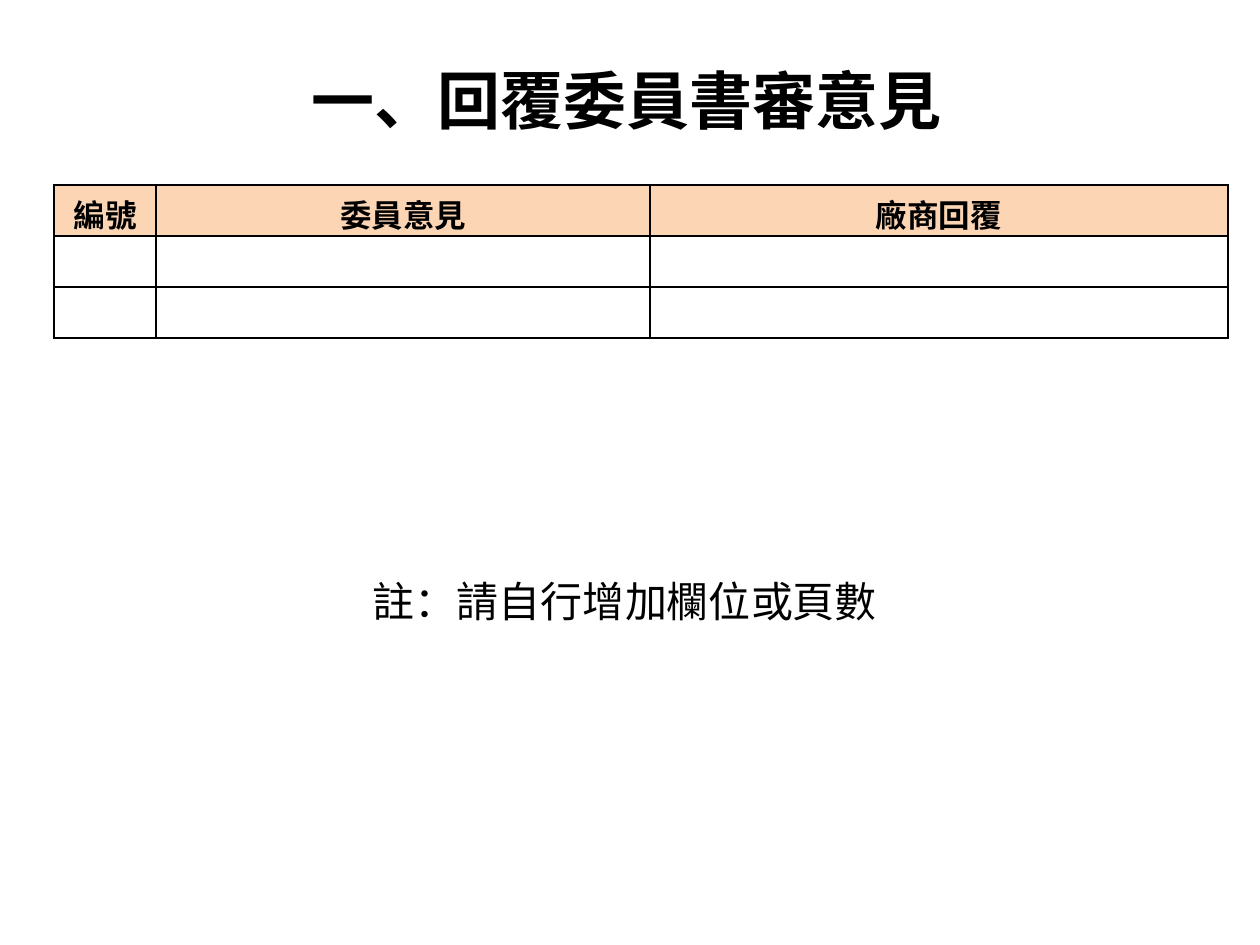
from lxml import etree
from pptx import Presentation
from pptx.dml.color import RGBColor
from pptx.enum.text import MSO_ANCHOR, PP_ALIGN
from pptx.oxml.ns import qn
from pptx.util import Pt

CENTER = PP_ALIGN.CENTER
LEFT = PP_ALIGN.LEFT
TOP = MSO_ANCHOR.TOP
MIDDLE = MSO_ANCHOR.MIDDLE

BLACK = RGBColor(0, 0, 0)
WHITE = RGBColor(255, 255, 255)
PEACH = RGBColor(0xFC, 0xD5, 0xB5)
FONT = "Noto Sans CJK SC"

TITLE = "一、回覆委員書審意見"
NOTE = "註：請自行增加欄位或頁數"
ROWS = [
    ["編號", "委員意見", "廠商回覆"],
    ["", "", ""],
    ["", "", ""],
]
COLUMN_WIDTHS = [102, 494, 578]
ROW_HEIGHT = 51
TABLE_LEFT, TABLE_TOP = 54, 185
EMU_PER_PX = 914400 // 126


def px(length):
    return length * EMU_PER_PX


def write_text(frame, text, size, bold=False, align=LEFT):
    paragraph = frame.paragraphs[0]
    paragraph.alignment = align
    run = paragraph.add_run()
    run.text = text
    run.font.size = Pt(size)
    run.font.bold = bold
    run.font.name = FONT
    run.font.color.rgb = BLACK
    east_asian = etree.SubElement(run.font._element, qn("a:ea"))
    east_asian.set("typeface", FONT)


def add_text(slide, box, text, wrap=True, anchor=TOP, **style):
    shape = slide.shapes.add_textbox(*map(px, box))
    frame = shape.text_frame
    frame.word_wrap = wrap
    frame.vertical_anchor = anchor
    write_text(frame, text, **style)


def add_borders(cell):
    properties = cell._tc.get_or_add_tcPr()
    for index, side in enumerate(("lnL", "lnR", "lnT", "lnB")):
        line = etree.Element(qn(f"a:{side}"), w=str(Pt(1)))
        fill = etree.SubElement(line, qn("a:solidFill"))
        etree.SubElement(fill, qn("a:srgbClr"), val=str(BLACK))
        properties.insert(index, line)


def add_review_table(slide):
    frame = slide.shapes.add_table(
        len(ROWS), len(COLUMN_WIDTHS), px(TABLE_LEFT), px(TABLE_TOP),
        px(sum(COLUMN_WIDTHS)), px(ROW_HEIGHT * len(ROWS)))
    table = frame.table
    for column, width in zip(table.columns, COLUMN_WIDTHS):
        column.width = px(width)
    for row_index, texts in enumerate(ROWS):
        table.rows[row_index].height = px(ROW_HEIGHT)
        for column_index, text in enumerate(texts):
            cell = table.cell(row_index, column_index)
            cell.margin_bottom = 0
            cell.fill.solid()
            cell.fill.fore_color.rgb = WHITE if row_index else PEACH
            add_borders(cell)
            if text:
                write_text(cell.text_frame, text, size=18, bold=True, align=CENTER)


def main():
    presentation = Presentation()
    presentation.slide_width = px(1260)
    presentation.slide_height = px(945)
    slide = presentation.slides.add_slide(presentation.slide_layouts[6])
    add_text(slide, (299, 55, 661, 89), TITLE, wrap=False, size=36, bold=True)
    add_review_table(slide)
    add_text(slide, (154, 552, 942, 98), NOTE, anchor=MIDDLE, size=24, align=CENTER)
    presentation.save("out.pptx")


if __name__ == "__main__":
    main()
